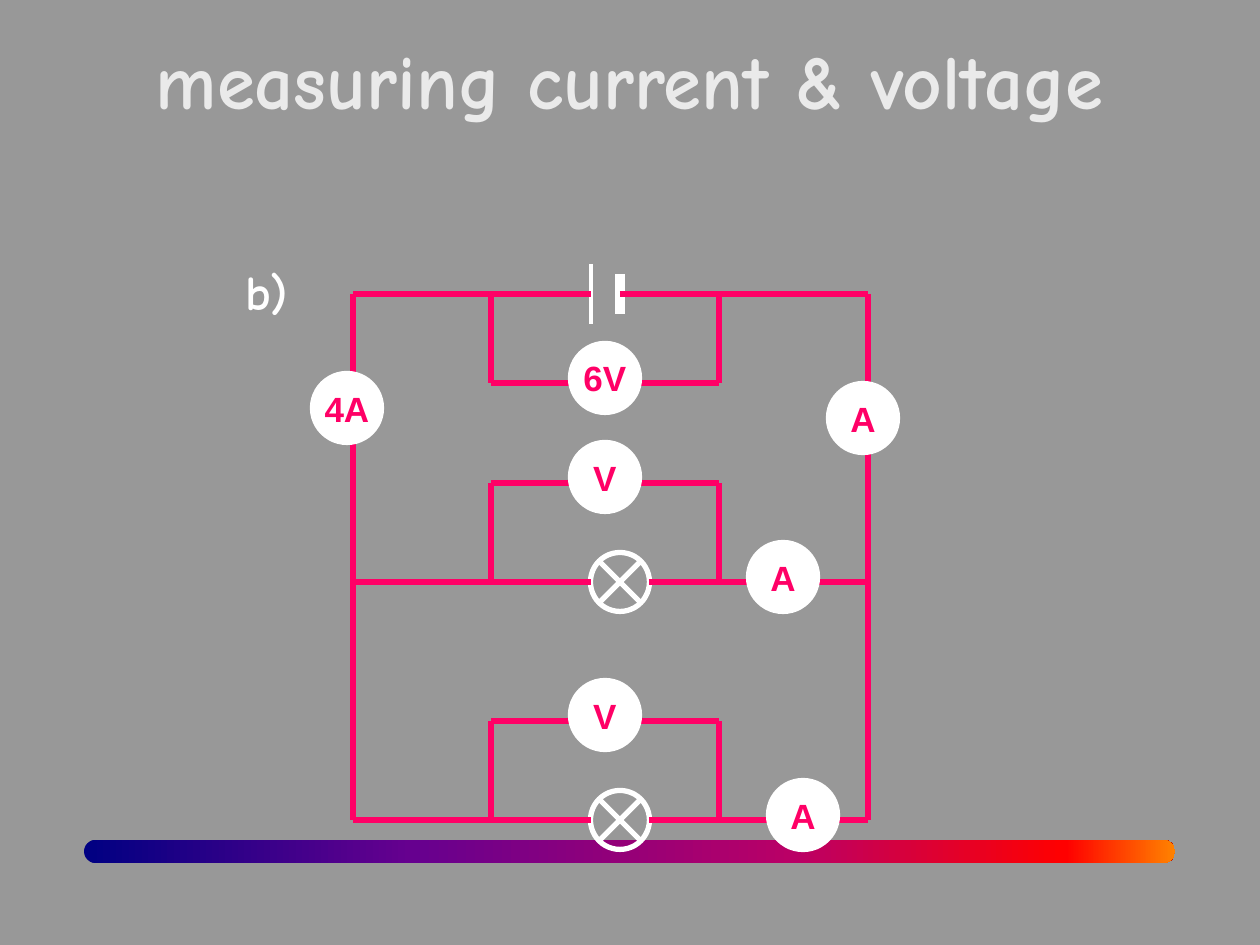
from lxml import etree
from pptx import Presentation
from pptx import util as u
from pptx.dml.color import RGBColor
from pptx.enum import shapes, text
from pptx.oxml import ns

PX = 914400 // 126  # EMU in one px

THEME = {
    "background": "989898", "title": "EAEAEA", "wire": "FF0066", "symbol": "FFFFFF",
    "heading_font": "Comic Neue", "meter_font": "Arial",
    "title_size": 44, "label_size": 28, "meter_size": 20,
    "wire_width": 3, "long_plate_width": 2.25, "short_plate_width": 6,
    "bar": [(0, "000082"), (30, "66008F"), (65, "BA0066"), (90, "FF0000"), (100, "FF8200")],
}

TITLE = ("measuring current & voltage", (0, 26, 1260, 105))
LABEL = ("b)", (233, 255, 89, 72))
BAR = (84, 840, 1091, 23)

LEFT, RIGHT = 353, 868             # outer rails
TAP_LEFT, TAP_RIGHT = 491, 719     # where the voltmeters join
CELL, LAMP = (591, 620), 620       # plate positions, lamp centre
LAMP_SIZE, METER_SIZE = 59, 69
BRANCHES = [                       # height, component, voltmeter wire height
    (294, "cell", 383),
    (582, "lamp", 483),
    (820, "lamp", 721),
]
METERS = [                         # reading, centre
    ("6V", 605, 378), ("V", 605, 477), ("V", 605, 715),
    ("4A", 347, 408), ("A", 863, 418), ("A", 783, 577), ("A", 803, 815),
]


def px(*lengths):
    return [length * PX for length in lengths]


def color(name):
    return RGBColor.from_string(THEME[name])


def write(shape, words, align, **font):
    frame = shape.text_frame
    paragraph = frame.paragraphs[0]
    paragraph.text = words
    paragraph.alignment = align
    font_color = font.pop("color")
    for name, value in font.items():
        setattr(paragraph.font, name, value)
    paragraph.font.bold = True
    paragraph.font.color.rgb = color(font_color)
    return frame


def line(slide, start, end, tint="wire", width="wire_width"):
    connector = slide.shapes.add_connector(
        shapes.MSO_CONNECTOR.STRAIGHT, *px(*start, *end))
    connector.line.color.rgb = color(tint)
    connector.line.width = u.Pt(THEME[width])
    etree.SubElement(connector.element.spPr, ns.qn("a:effectLst"))


def circle(slide, kind, x, y, size):
    half = size / 2
    shape = slide.shapes.add_shape(kind, *(round(v) for v in px(x - half, y - half, size, size)))
    shape.shadow.inherit = False
    shape.line.color.rgb = color("symbol")
    shape.line.width = u.Pt(THEME["wire_width"])
    return shape


def add_bar(slide):
    bar = slide.shapes.add_shape(shapes.MSO_SHAPE.ROUNDED_RECTANGLE, *px(*BAR))
    bar.adjustments[0] = 0.5
    bar.shadow.inherit = False
    bar.line.fill.background()
    bar.fill.gradient()
    bar.fill.gradient_angle = 0
    stops = bar.element.spPr.find(".//" + ns.qn("a:gsLst"))
    for stop in list(stops):
        stops.remove(stop)
    for percent, tint in THEME["bar"]:
        stop = etree.SubElement(stops, ns.qn("a:gs"), pos=str(percent * 1000))
        etree.SubElement(stop, ns.qn("a:srgbClr"), val=tint)


def add_headings(slide):
    title = slide.shapes.title
    label = slide.shapes.add_textbox(*px(*LABEL[1]))
    for name, value in zip(("left", "top", "width", "height"), px(*TITLE[1])):
        setattr(title, name, value)
    for shape, words, align, size, tint in (
            (title, TITLE[0], text.PP_ALIGN.CENTER, "title_size", "title"),
            (label, LABEL[0], text.PP_ALIGN.LEFT, "label_size", "symbol")):
        frame = write(shape, words, align, name=THEME["heading_font"],
                      size=u.Pt(THEME[size]), color=tint)
        frame.word_wrap = True
        frame.vertical_anchor = text.MSO_ANCHOR.TOP
        frame.auto_size = text.MSO_AUTO_SIZE.SHAPE_TO_FIT_TEXT


def add_branch(slide, y, component, meter_y):
    """Draw one horizontal branch, its component and its voltmeter loop."""
    if component == "cell":
        gap = CELL
        line(slide, (CELL[0], y - 30), (CELL[0], y + 30), "symbol", "long_plate_width")
        line(slide, (CELL[1], y - 20), (CELL[1], y + 20), "symbol", "short_plate_width")
    else:
        gap = (LAMP - LAMP_SIZE // 2, LAMP + LAMP_SIZE // 2)
        lamp = circle(slide, shapes.MSO_SHAPE.FLOWCHART_SUMMING_JUNCTION, LAMP, y, LAMP_SIZE)
        lamp.fill.background()
    line(slide, (LEFT, y), (gap[0], y))
    line(slide, (gap[1], y), (RIGHT, y))
    line(slide, (TAP_LEFT, meter_y), (TAP_RIGHT, meter_y))
    for x in (TAP_LEFT, TAP_RIGHT):
        line(slide, (x, y), (x, meter_y))


def add_meter(slide, reading, x, y):
    meter = circle(slide, shapes.MSO_SHAPE.OVAL, x, y, METER_SIZE)
    meter.fill.solid()
    meter.fill.fore_color.rgb = color("symbol")
    frame = write(meter, reading, text.PP_ALIGN.CENTER, name=THEME["meter_font"],
                  size=u.Pt(THEME["meter_size"]), color="wire")
    frame.word_wrap = False
    frame.vertical_anchor = text.MSO_ANCHOR.MIDDLE


def main():
    presentation = Presentation()
    presentation.slide_width, presentation.slide_height = u.Inches(10), u.Inches(7.5)
    slide = presentation.slides.add_slide(presentation.slide_layouts[5])
    slide.background.fill.solid()
    slide.background.fill.fore_color.rgb = color("background")

    add_bar(slide)
    add_headings(slide)
    for x in (LEFT, RIGHT):
        line(slide, (x, BRANCHES[0][0]), (x, BRANCHES[-1][0]))
    for branch in BRANCHES:
        add_branch(slide, *branch)
    for meter in METERS:
        add_meter(slide, *meter)
    presentation.save("out.pptx")


if __name__ == "__main__":
    main()
